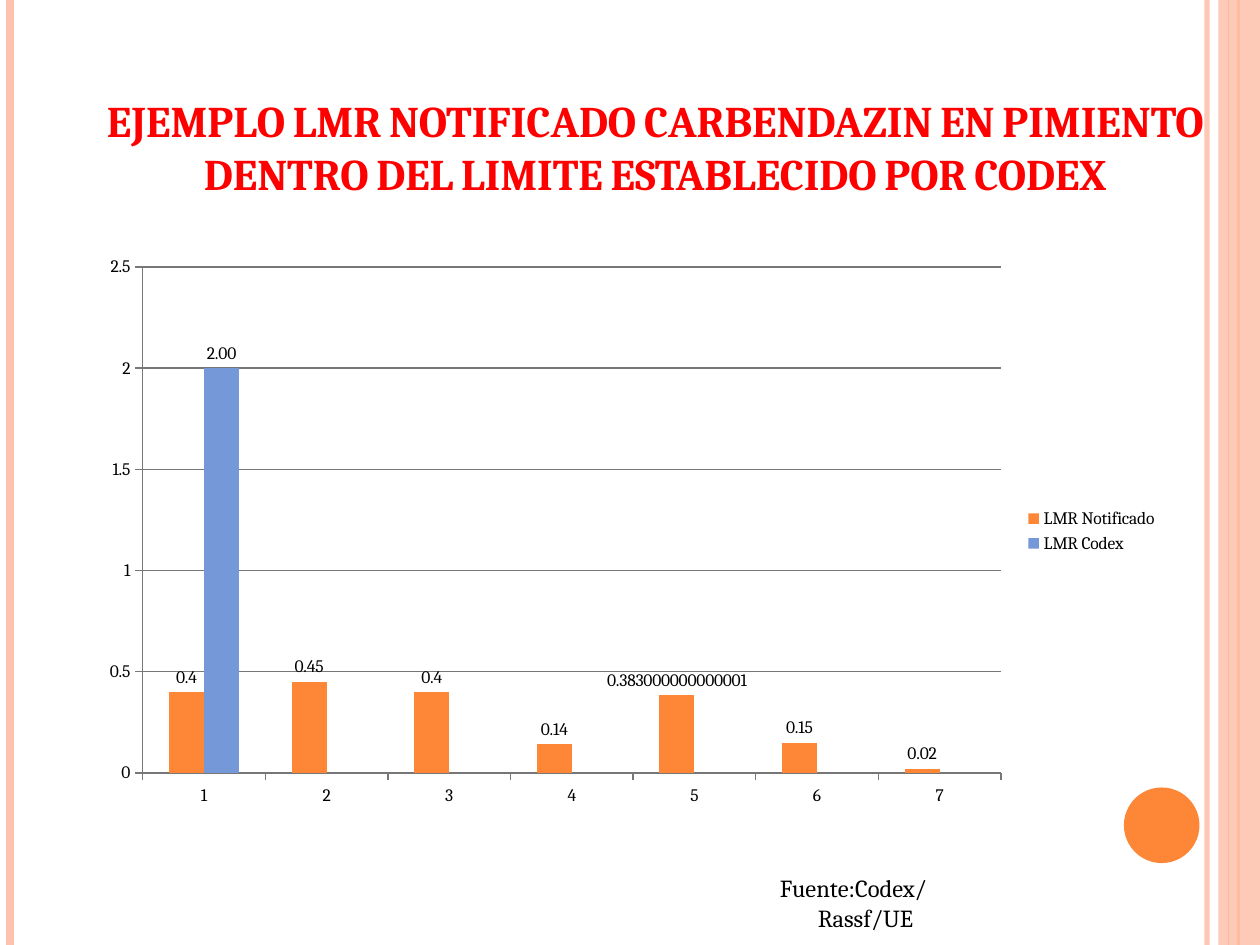
from lxml import etree
from pptx import Presentation
from pptx.chart.data import CategoryChartData
from pptx.dml.color import RGBColor
from pptx.enum.chart import XL_CHART_TYPE, XL_LABEL_POSITION, XL_LEGEND_POSITION, XL_TICK_MARK
from pptx.enum.shapes import MSO_CONNECTOR, MSO_SHAPE
from pptx.enum.text import MSO_ANCHOR, MSO_AUTO_SIZE, PP_ALIGN
from pptx.oxml.ns import qn
from pptx.util import Inches, Pt

COLUMN = XL_CHART_TYPE.COLUMN_CLUSTERED
ABOVE = XL_LABEL_POSITION.OUTSIDE_END
RIGHT = XL_LEGEND_POSITION.RIGHT
TICK_OUT = XL_TICK_MARK.OUTSIDE
STRAIGHT = MSO_CONNECTOR.STRAIGHT
RECT, OVAL = MSO_SHAPE.RECTANGLE, MSO_SHAPE.OVAL
BOTTOM, TOP = MSO_ANCHOR.BOTTOM, MSO_ANCHOR.TOP
NO_FIT, GROW = MSO_AUTO_SIZE.NONE, MSO_AUTO_SIZE.SHAPE_TO_FIT_TEXT
CENTER, LEFT = PP_ALIGN.CENTER, PP_ALIGN.LEFT

COLS, ROWS = 100, 75
UNIT = Inches(0.1)
FONT = "Cambria"
COLORS = {"peach": "FEC3AE", "orange": "FE8637", "blue": "7598D9",
          "red": "FF0000", "black": "000000", "gray": "777777"}


def hue(name):
    """Return the named colour."""
    return RGBColor.from_string(COLORS[name])


def span(box):
    """Turn a box in columns and rows into lengths."""
    return [round(n * UNIT) for n in box]


def fade(fill, share):
    """Set the opacity of a solid fill element, in percent."""
    color = fill.find(".//" + qn("a:srgbClr"))
    etree.SubElement(color, qn("a:alpha")).set("val", str(share * 1000))


def add_rule(slide, box, col, name, width, share=100):
    """Draw a vertical rule down the box at a column."""
    left, top, _, high = box
    x, y, _, drop = span((left + col, top, 0, high))
    rule = slide.shapes.add_connector(STRAIGHT, x, y, x, y + drop)
    rule.line.color.rgb = hue(name)
    rule.line.width = Pt(width)
    props = rule._element.spPr
    if share < 100:
        fade(props.find(qn("a:ln")), share)
    etree.SubElement(props, qn("a:effectLst"))


def add_plain(slide, kind, box, name):
    """Add a flat shape without an outline."""
    shape = slide.shapes.add_shape(kind, *span(box))
    shape.shadow.inherit = False
    shape.fill.solid()
    shape.fill.fore_color.rgb = hue(name)
    shape.line.fill.background()
    return shape


def add_frame(slide, box):
    """Place the edge rules, side band and disc in the box."""
    left, top, wide, high = box
    add_rule(slide, box, wide - 4.2, "peach", 3, 93)
    add_rule(slide, box, 0.8, "peach", 4.5)
    add_rule(slide, box, wide - 1.7, "orange", 1.5)
    band = add_plain(slide, RECT, (left + wide - 3.3, top, 3.3, high), "peach")
    fade(band._element.spPr.find(qn("a:solidFill")), 87)
    add_rule(slide, box, wide - 2.5, "orange", 0.75, 20)
    add_plain(slide, OVAL, (left + wide - 10.8, top + high - 12.5, 6, 6), "orange")


def style_axis(axis):
    """Give an axis its ticks and line."""
    axis.major_tick_mark = TICK_OUT
    axis.format.line.color.rgb = hue("gray")


def add_limits(slide, box):
    """Place the chart of residue limits in the box."""
    data = CategoryChartData()
    data.categories = [str(n) for n in range(1, 8)]
    data.add_series("LMR Notificado", [0.4, 0.45, 0.4, 0.14, 0.383000000000001, 0.15, 0.02])
    data.add_series("LMR Codex", [2] + [None] * 6)
    chart = slide.shapes.add_chart(COLUMN, *span(box), data).chart
    chart.font.name, chart.font.size = FONT, Pt(10)
    chart.font.color.rgb = hue("black")
    chart.has_title = False
    chart.has_legend = True
    chart.legend.position = RIGHT
    chart.legend.include_in_layout = False
    style_axis(chart.category_axis)
    style_axis(chart.value_axis)
    chart.value_axis.has_major_gridlines = True
    chart.value_axis.major_gridlines.format.line.color.rgb = hue("gray")
    plot = chart.plots[0]
    plot.gap_width, plot.overlap, plot.vary_by_categories = 150, 0, False
    for bars, name, form in zip(plot.series, ("orange", "blue"), ("General", "0.00")):
        bars.format.fill.solid()
        bars.format.fill.fore_color.rgb = hue(name)
        bars.invert_if_negative = False
        labels = bars.data_labels
        labels.show_value = True
        labels.position = ABOVE
        labels.number_format, labels.number_format_is_linked = form, False


def fill_text(holder, box, text, size, name, anchor, align, fit):
    """Move a placeholder to the box, raise it and write its text."""
    holder.left, holder.top, holder.width, holder.height = span(box)
    tree = holder._element.getparent()
    tree.append(holder._element)
    frame = holder.text_frame
    frame.word_wrap, frame.auto_size = True, fit
    frame.vertical_anchor = anchor
    para = frame.paragraphs[0]
    para.alignment = align
    run = para.add_run()
    run.text = text
    run.font.name, run.font.size = FONT, Pt(size)
    run.font.color.rgb = hue(name)
    return para, run


def add_title(slide, box):
    """Place the title in the box."""
    text = ("EJEMPLO LMR NOTIFICADO CARBENDAZIN EN PIMIENTO "
            "DENTRO DEL LIMITE ESTABLECIDO POR CODEX")
    _, run = fill_text(slide.shapes.title, box, text, 25, "red", BOTTOM, CENTER, NO_FIT)
    run.font.bold = True
    run.font._element.set("cap", "small")


def add_source(slide, box):
    """Place the source note in the box with a hanging indent."""
    para, _ = fill_text(slide.placeholders[1], box, "Fuente:Codex/Rassf/UE",
                        14, "black", TOP, LEFT, GROW)
    para.space_before = Pt(6)
    props = para._p.get_or_add_pPr()
    props.set("marL", str(Inches(0.3)))
    props.set("indent", str(-Inches(0.3)))
    etree.SubElement(props, qn("a:buNone"))


def main():
    """Build the slide and save it."""
    deck = Presentation()
    deck.slide_width, deck.slide_height = COLS * UNIT, ROWS * UNIT
    slide = deck.slides.add_slide(deck.slide_layouts[1])
    add_frame(slide, (0, 0, COLS, ROWS))
    add_limits(slide, (7, 19.5, 85.9, 45.3))
    add_title(slide, (6.2, 3.1, 91.6, 13.2))
    add_source(slide, (60.9, 68.8, 20.1, 5.7))
    deck.save("out.pptx")


if __name__ == "__main__":
    main()
